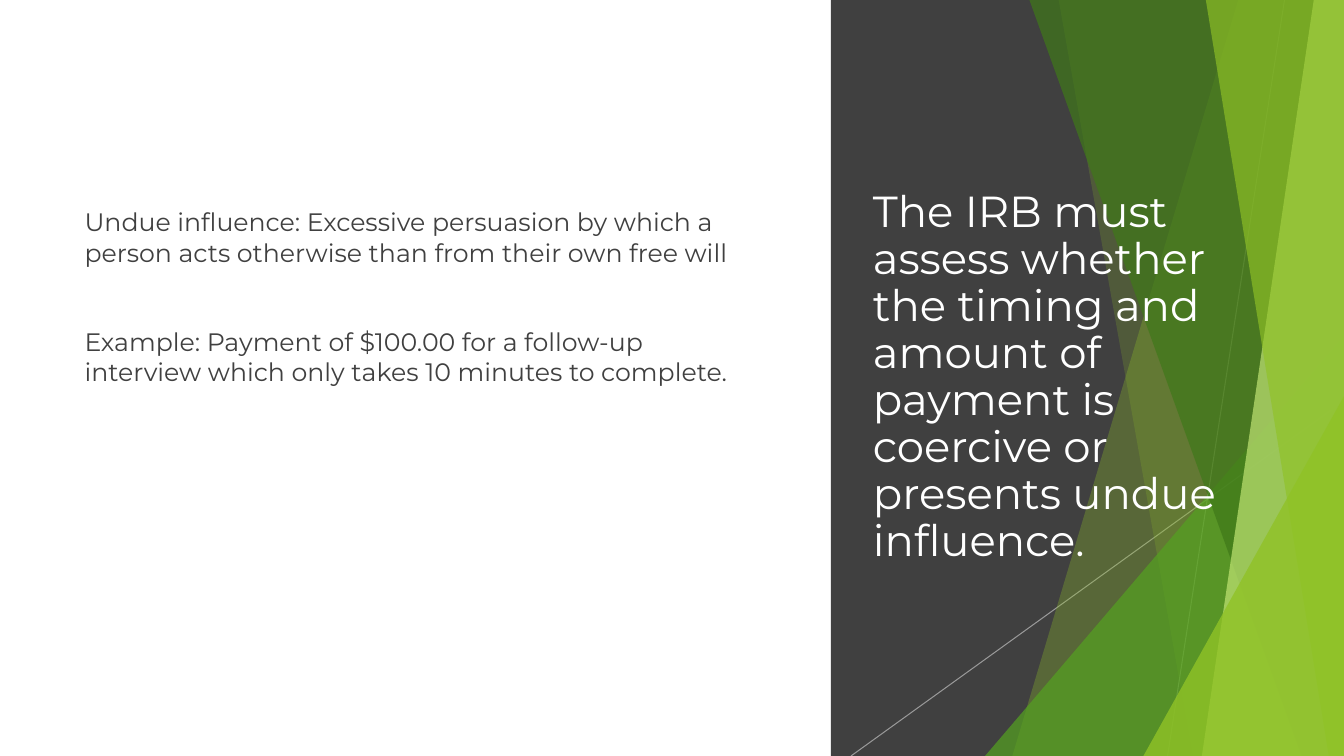
from lxml import etree
from pptx import Presentation
from pptx.dml.color import RGBColor
from pptx.enum.shapes import MSO_CONNECTOR, MSO_SHAPE
from pptx.enum.text import MSO_ANCHOR
from pptx.oxml.ns import qn
from pptx.util import Inches, Pt

RECT = MSO_SHAPE.RECTANGLE
TRIANGLE = MSO_SHAPE.ISOSCELES_TRIANGLE
STRAIGHT = MSO_CONNECTOR.STRAIGHT
TOP = MSO_ANCHOR.TOP
MIDDLE = MSO_ANCHOR.MIDDLE

FONT = "Montserrat"
WIDE, HIGH = 13.33, 7.5

RAYS = [
    ((4.5, 0), (3.34, 7.5)),
    ((4.96, 4.07), (0.2, 7.5)),
]
FACETS = [
    ("band", 4.04, 1.8, "90C226", 30),
    ("band", 2.26, 3.59, "90C226", 20),
    ("peak", 1.53, 3.33, "54A021", 72),
    ("band", 1.97, 4.67, "3F7819", 70),
    ("band", 4.79, 3.68, "C0E474", 70),
    ("band", 3.72, 4.94, "90C226", 65),
    ("peak", 3.1, 3.93, "90C226", 80),
]
TITLE = ("The IRB must assess whether the timing and amount of payment "
         "is coercive or presents undue influence.")
POINTS = [
    "Undue influence: Excessive persuasion by which a person acts "
    "otherwise than from their own free will",
    "Example: Payment of $100.00 for a follow-up interview which only "
    "takes 10 minutes to complete.",
]


def tint(fill, color, alpha=100):
    fill.solid()
    fill.fore_color.rgb = RGBColor.from_string(color)
    if alpha < 100:
        node = fill._xPr.find(qn("a:solidFill"))[0]
        etree.SubElement(node, qn("a:alpha"), val=str(alpha * 1000))


def paint(shape, color, alpha=100):
    shape.shadow.inherit = False
    shape.line.fill.background()
    tint(shape.fill, color, alpha)


def add_ray(slide, start, end):
    ray = slide.shapes.add_connector(
        STRAIGHT, *[Inches(n) for n in (*start, *end)])
    ray.line.width = Pt(0.75)
    tint(ray.line.fill, "BFBFBF", 70)
    etree.SubElement(ray._element.spPr, qn("a:effectLst"))


def add_band(slide, upper, lower, right, top, base):
    pen = slide.shapes.build_freeform(Inches(upper), Inches(top))
    corners = [(right, top), (right, base), (lower, base)]
    pen.add_line_segments([(Inches(x), Inches(y)) for x, y in corners])
    return pen.convert_to_shape()


def add_peak(slide, left, top, right, base):
    peak = slide.shapes.add_shape(
        TRIANGLE, Inches(left), Inches(top),
        Inches(right - left), Inches(base - top))
    peak.adjustments[0] = 1
    return peak


def add_text(slide, box, items, size, color, anchor):
    frame = slide.shapes.add_textbox(*[Inches(n) for n in box]).text_frame
    frame.word_wrap = True
    frame.vertical_anchor = anchor
    for i, item in enumerate(items):
        para = frame.paragraphs[0] if i == 0 else frame.add_paragraph()
        run = para.add_run()
        run.text = item
        run.font.name = FONT
        run.font.size = Pt(size)
        run.font.color.rgb = RGBColor.from_string(color)
    return frame


def draw_body(slide, left, top, width, height):
    box = (left + 0.74, top + 1.37, width - 1.51, height - 2.74)
    frame = add_text(slide, box, POINTS, 18, "404040", TOP)
    frame.margin_top = Inches(0.68)
    for para in frame.paragraphs[1:]:
        para.space_before = Pt(42)


def draw_panel(slide, left, top, width, height):
    right, base = left + width, top + height
    back = slide.shapes.add_shape(
        RECT, *[Inches(n) for n in (left, top, width, height)])
    paint(back, "404040")
    for start, end in RAYS:
        add_ray(slide, *[(left + x, top + y) for x, y in (start, end)])
    for kind, a, b, color, alpha in FACETS:
        if kind == "band":
            facet = add_band(slide, left + a, left + b, right, top, base)
        else:
            facet = add_peak(slide, left + a, top + b, right, base)
        paint(facet, color, alpha)
    box = (left + 0.32, top + 1.37, width - 1.4, height - 2.74)
    frame = add_text(slide, box, [TITLE], 31, "FFFFFF", MIDDLE)
    frame.paragraphs[0].line_spacing = 0.9


def main():
    deck = Presentation()
    deck.slide_width, deck.slide_height = Inches(WIDE), Inches(HIGH)
    slide = deck.slides.add_slide(deck.slide_layouts[6])
    tint(slide.background.fill, "FFFFFF")
    split = 8.24
    draw_body(slide, 0, 0, split, HIGH)
    draw_panel(slide, split, 0, WIDE - split, HIGH)
    deck.save("out.pptx")


if __name__ == "__main__":
    main()
